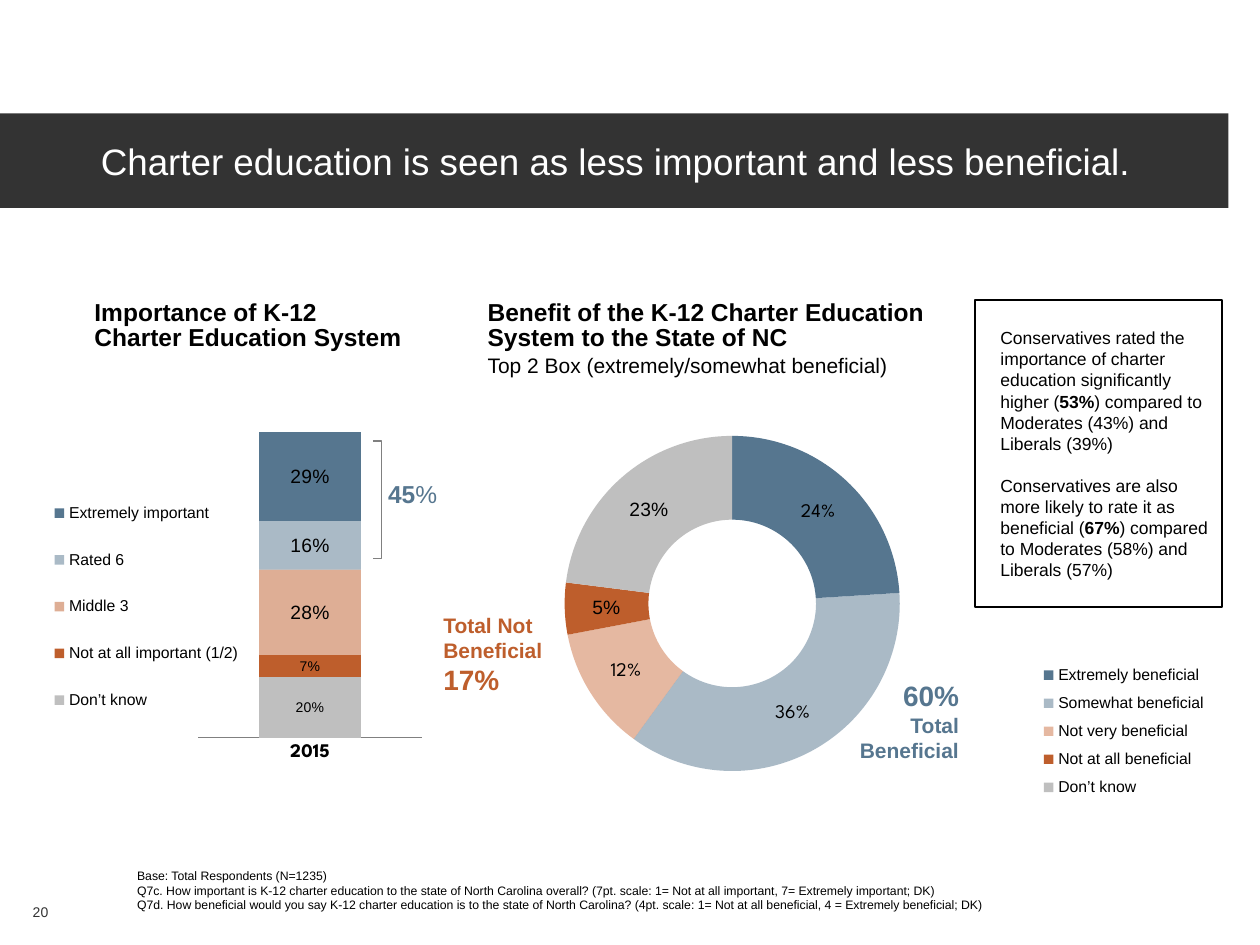
from lxml.etree import SubElement
from pptx import Presentation
from pptx.chart.data import CategoryChartData
from pptx.dml.color import RGBColor
from pptx.enum.chart import XL_CHART_TYPE, XL_LABEL_POSITION, XL_LEGEND_POSITION, XL_TICK_MARK
from pptx.enum.shapes import MSO_SHAPE
from pptx.enum.text import MSO_ANCHOR, MSO_AUTO_SIZE, PP_ALIGN
from pptx.oxml import parse_xml
from pptx.oxml.ns import nsdecls, qn
from pptx.util import Inches, Pt

W, H = Inches(10), Inches(7.5)
COLORS = {"blue": "56768F", "rust": "BE5E2C", "rust_light": "CC7245", "grey": "BFBFBF",
          "line": "808080", "dark": "333333", "black": "000000", "white": "FFFFFF"}


def rgb(name):
    return RGBColor.from_string(COLORS[name])


def share(x, y, w, h):
    """Turn percentages of the slide's width and height into lengths."""
    return [int(v * side / 100) for v, side in zip((x, y, w, h), (W, H, W, H))]


def style(font, size, color="black", bold=None, name="Arial"):
    font.size, font.name, font.bold = Pt(size), name, bold
    font.color.rgb = rgb(color)


def add_run(p, text, *look):
    for i, line in enumerate(text.split("\n")):
        if i:
            p.add_line_break()
        r = p.add_run()
        r.text = line
        style(r.font, *look)


def fill_text(tf, paragraphs, insets=(0, 0, 0, 0), anchor=MSO_ANCHOR.TOP,
              align=PP_ALIGN.LEFT, spacing=None, before=0):
    """Write paragraphs, each a list of (text, size, color, bold) runs."""
    tf.word_wrap, tf.auto_size, tf.vertical_anchor = True, MSO_AUTO_SIZE.NONE, anchor
    tf.margin_left, tf.margin_top, tf.margin_right, tf.margin_bottom = map(Inches, insets)
    for i, runs in enumerate(paragraphs):
        p = tf.add_paragraph() if i else tf.paragraphs[0]
        p.alignment = align
        if spacing:
            p.line_spacing = spacing
        if i and before:
            p.space_before = Pt(before)
        for run in runs:
            add_run(p, *run)


def add_text(s, at, paragraphs, wrap=True, **layout):
    tf = s.shapes.add_textbox(*share(*at)).text_frame
    fill_text(tf, paragraphs, **layout)
    tf.word_wrap = wrap


def add_outline(s, shape, at, color, width):
    sp = s.shapes.add_shape(shape, *share(*at))
    sp.shadow.inherit = False
    sp.fill.background()
    sp.line.color.rgb = rgb(color)
    sp.line.width = Pt(width)
    return sp


def paint(fmt, color, alpha=100):
    fmt.fill.solid()
    fmt.fill.fore_color.rgb = rgb(color)
    if alpha < 100:
        clr = next(fmt._element.iter(qn("a:srgbClr")))
        SubElement(clr, qn("a:alpha")).set("val", str(alpha * 1000))


def place(element, index, x, y, w, h, inner=False):
    """Give a plot area or legend a manual layout in shares of the chart."""
    for old in element.findall(qn("c:layout")):
        element.remove(old)
    target = '<c:layoutTarget val="inner"/>' if inner else ""
    values = "".join(f'<c:{k} val="{v}"/>' for k, v in zip("xywh", (x, y, w, h)))
    element.insert(index, parse_xml(
        f'<c:layout {nsdecls("c")}><c:manualLayout>{target}<c:xMode val="edge"/>'
        f'<c:yMode val="edge"/>{values}</c:manualLayout></c:layout>'))


def add_chart(s, kind, at, cats, series, plot, legend):
    data = CategoryChartData(number_format="0%")
    data.categories = cats
    for name, values in series:
        data.add_series(name, values)
    chart = s.shapes.add_chart(kind, *share(*at), data).chart
    chart.has_title = False
    style(chart.font, 11, name="League Spartan")
    chart.has_legend = True
    chart.legend.position = XL_LEGEND_POSITION.RIGHT
    chart.legend.include_in_layout = False
    style(chart.legend.font, 9)
    place(chart._chartSpace.chart.plotArea, 0, *plot, inner=True)
    place(chart.legend._element, 1, *legend)
    return chart


def show_labels(labels):
    labels.show_value = True
    labels.number_format, labels.number_format_is_linked = "0%", False


def add_importance_chart(s):
    rows = [("Don’t know", 0.2, "grey", 100, 8),
            ("Not at all important (1/2)", 0.07, "rust", 100, 8),
            ("Middle 3", 0.28, "rust", 50, 11),
            ("Rated 6", 0.16, "blue", 50, 11),
            ("Extremely important", 0.29, "blue", 100, 11)]
    chart = add_chart(s, XL_CHART_TYPE.COLUMN_STACKED, (2.9, 42, 32.9, 46.27), ["2015"],
                      [(row[0], [row[1]]) for row in rows],
                      (0.39, 0.08, 0.54, 0.7), (0.03, 0.18, 0.47, 0.6))
    plot = chart.plots[0]
    plot.gap_width, plot.overlap, plot.vary_by_categories = 120, 100, False
    for series, (_, _, color, alpha, size) in zip(plot.series, rows):
        paint(series.format, color, alpha)
        labels = series.data_labels
        show_labels(labels)
        labels.position = XL_LABEL_POSITION.CENTER
        style(labels.font, size)
    value, category = chart.value_axis, chart.category_axis
    value.minimum_scale, value.maximum_scale = 0, 1
    value.has_major_gridlines = value.visible = False
    category.major_tick_mark = XL_TICK_MARK.NONE
    category.format.line.color.rgb = rgb("line")
    style(category.tick_labels.font, 11, "black", True, "League Spartan")


def add_benefit_chart(s):
    rows = [("Extremely beneficial", 0.24, "blue", 100),
            ("Somewhat beneficial", 0.36, "blue", 50),
            ("Not very beneficial", 0.12, "rust_light", 50),
            ("Not at all beneficial", 0.05, "rust", 100),
            ("Don’t know", 0.23, "grey", 100)]
    chart = add_chart(s, XL_CHART_TYPE.DOUGHNUT, (42.3, 42.4, 55.5, 46.67),
                      [row[0] for row in rows], [("Series 1", [row[1] for row in rows])],
                      (0.04, 0.08, 0.49, 0.76), (0.7, 0.58, 0.29, 0.34))
    plot = chart.plots[0]
    plot.vary_by_categories = True
    series = plot.series[0]
    show_labels(series.data_labels)
    style(series.data_labels.font, 11, name="League Spartan")
    for i, (_, _, color, alpha) in enumerate(rows):
        paint(series.points[i].format, color, alpha)
    for i in (3, 4):
        style(series.points[i].data_label.font, 11)


def add_title(s, text):
    sp = s.shapes.title
    sp.left, sp.top, sp.width, sp.height = share(0, 12, 97.5, 10)
    paint(sp, "dark")
    fill_text(sp.text_frame, [[(text, 21, "white")]], (0.8, 0, 0, 0), MSO_ANCHOR.MIDDLE)


def add_callout(s):
    sp = add_outline(s, MSO_SHAPE.RECTANGLE, (77.4, 31.73, 19.6, 32.53), "black", 1)
    fill_text(sp.text_frame, [
        [("Conservatives rated the importance of charter education significantly higher (", 10),
         ("53%", 10, "black", True),
         (") compared to Moderates (43%) and Liberals (39%)", 10)],
        [("Conservatives are also more likely to rate it as beneficial (", 10),
         ("67%", 10, "black", True),
         (") compared to Moderates (58%) and Liberals (57%)", 10)],
    ], (0.2, 0.1, 0.1, 0.1), MSO_ANCHOR.MIDDLE, before=12)


def main():
    prs = Presentation()
    prs.slide_width, prs.slide_height = W, H
    s = prs.slides.add_slide(prs.slide_layouts[5])
    padding = (0.1, 0.05, 0.1, 0.05)

    add_text(s, (2.6, 95.6, 17.5, 1.73), [[("20", 8, "dark")]])
    add_benefit_chart(s)
    add_title(s, "Charter education is seen as less important and less beneficial.")
    add_text(s, (38.7, 31.87, 37.3, 8.27), [
        [("Benefit of the K-12 Charter Education System to the State of NC", 14, "black", True)],
        [("Top 2 Box (extremely/somewhat beneficial)", 12)]], spacing=0.85, before=3)
    add_text(s, (7.5, 31.87, 32.6, 5.47), [
        [("Importance of K-12\nCharter Education System", 14, "black", True)]], spacing=0.85)
    add_text(s, (9.9, 91.2, 87.5, 6), [
        [("Base: Total Respondents (N=1235)\nQ7c. How important is K-12 charter education to the state of "
          "North Carolina overall? (7pt. scale: 1= Not at all important, 7= Extremely important; DK)", 7)],
        [("Q7d. How beneficial would you say K-12 charter education is to the state of North Carolina? "
          "(4pt. scale: 1= Not at all beneficial, 4 = Extremely beneficial; DK)", 7)]],
        insets=padding, anchor=MSO_ANCHOR.BOTTOM)
    add_text(s, (66, 71.2, 11.1, 10.27), [
        [("60%", 16, "blue", True)], [("Total Beneficial", 12, "blue", True)]],
        insets=padding, align=PP_ALIGN.RIGHT)
    add_text(s, (34.2, 64.13, 12.7, 10.27), [
        [("Total Not Beneficial ", 12, "rust", True), ("17%", 16, "rust", True)]], insets=padding)
    add_callout(s)
    add_importance_chart(s)
    bracket = add_outline(s, MSO_SHAPE.RIGHT_BRACKET, (29.6, 46.67, 0.7, 12.4), "line", 0.75)
    bracket.adjustments[0] = 0
    add_text(s, (30.8, 50.67, 3.9, 3.2), [[("45", 14, "blue", True), ("%", 14, "blue")]],
             wrap=False, align=PP_ALIGN.RIGHT)
    prs.save("out.pptx")


if __name__ == "__main__":
    main()
